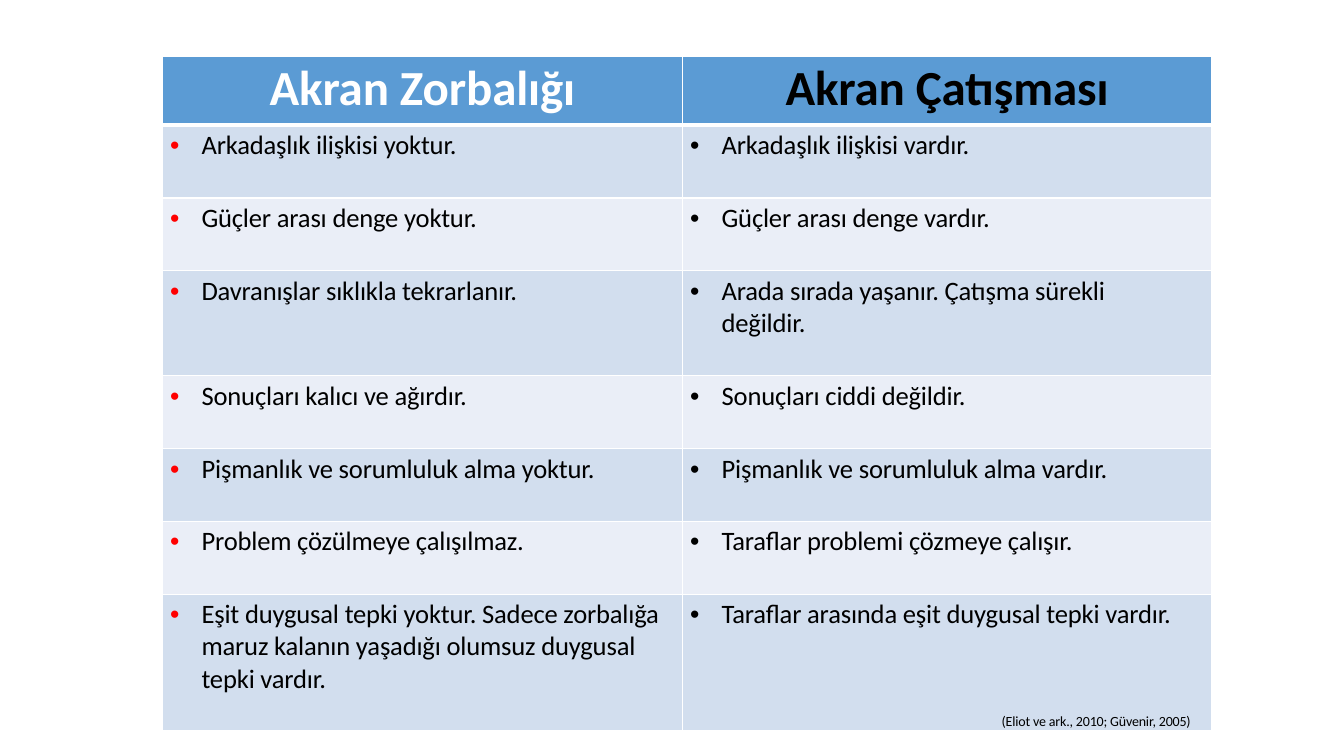
from dataclasses import dataclass

from lxml.etree import SubElement
from pptx import Presentation
from pptx.dml.color import RGBColor as Rgb
from pptx.enum.text import PP_ALIGN as Align
from pptx.oxml.ns import qn
from pptx.util import Pt


@dataclass(frozen=True)
class Theme:
    font: str = "Calibri"
    heading_size: int = 35
    body_size: int = 19
    citation_size: int = 10
    white: str = "FFFFFF"
    black: str = "000000"
    red: str = "FF0000"
    heading_fill: str = "5B9BD4"
    band_fills: tuple = ("D2DEEE", "EAEEF7")


THEME = Theme()
HEADINGS = [("Akran Zorbalığı", THEME.white), ("Akran Çatışması", THEME.black)]
COMPARISONS = [
    ("Arkadaşlık ilişkisi yoktur.", "Arkadaşlık ilişkisi vardır."),
    ("Güçler arası denge yoktur.", "Güçler arası denge vardır."),
    ("Davranışlar sıklıkla tekrarlanır.",
     "Arada sırada yaşanır. Çatışma sürekli\vdeğildir."),
    ("Sonuçları kalıcı ve ağırdır.", "Sonuçları ciddi değildir."),
    ("Pişmanlık ve sorumluluk alma yoktur.",
     "Pişmanlık ve sorumluluk alma vardır."),
    ("Problem çözülmeye çalışılmaz.", "Taraflar problemi çözmeye çalışır."),
    ("Eşit duygusal tepki yoktur. Sadece zorbalığa maruz kalanın "
     "yaşadığı olumsuz duygusal tepki vardır.",
     "Taraflar arasında eşit duygusal tepki vardır."),
]
CITATION = "(Eliot ve ark., 2010; Güvenir, 2005)"
BULLET_COLORS = (THEME.red, THEME.black)
COLUMN_WIDTHS = (371.5, 378)
ROW_HEIGHTS = (49, 52, 52, 75, 52, 52, 52, 97.5)


def write(paragraph, text, size, color=THEME.black, bold=False):
    paragraph.text = text
    paragraph.font.name = THEME.font
    paragraph.font.size = Pt(size)
    paragraph.font.bold = bold
    paragraph.font.color.rgb = Rgb.from_string(color)
    for run in paragraph.runs:
        run.font._element.set("spc", "-10")


def indent(paragraph, left, hanging=0):
    properties = paragraph._p.get_or_add_pPr()
    properties.set("marL", str(Pt(left)))
    properties.set("indent", str(Pt(-hanging)))
    return properties


def add_bullet(paragraph, color):
    properties = indent(paragraph, 28, 22.5)
    bullet_color = SubElement(properties, qn("a:buClr"))
    SubElement(bullet_color, qn("a:srgbClr"), val=color)
    SubElement(properties, qn("a:buFont"), typeface="Arial")
    SubElement(properties, qn("a:buChar"), char="•")


def draw_borders(cell, top, bottom):
    properties = cell._tc.get_or_add_tcPr()
    for side, width in (("L", 1), ("R", 1), ("T", top), ("B", bottom)):
        border = SubElement(properties, qn(f"a:ln{side}"), w=str(Pt(width)))
        fill = SubElement(border, qn("a:solidFill"))
        SubElement(fill, qn("a:srgbClr"), val=THEME.white)


def style_cell(cell, fill, margin_top, border_top=1, border_bottom=1):
    cell.margin_left = cell.margin_right = cell.margin_bottom = 0
    cell.margin_top = Pt(margin_top)
    draw_borders(cell, border_top, border_bottom)
    cell.fill.solid()
    cell.fill.fore_color.rgb = Rgb.from_string(fill)
    return cell.text_frame.paragraphs[0]


def fill_headings(table):
    for column, (text, color) in enumerate(HEADINGS):
        heading = style_cell(table.cell(0, column), THEME.heading_fill, 1.4,
                             border_bottom=3)
        heading.alignment = Align.CENTER
        write(heading, text, THEME.heading_size, color, bold=True)


def fill_comparisons(table):
    for row, statements in enumerate(COMPARISONS, start=1):
        fill = THEME.band_fills[(row - 1) % 2]
        for column, text in enumerate(statements):
            statement = style_cell(table.cell(row, column), fill, 3.1,
                                   border_top=3 if row == 1 else 1)
            add_bullet(statement, BULLET_COLORS[column])
            write(statement, text, THEME.body_size)


def add_citation(cell):
    citation = cell.text_frame.add_paragraph()
    indent(citation, 228)
    citation.space_before = Pt(59)
    write(citation, CITATION, THEME.citation_size)


def add_comparison_table(slide):
    table = slide.shapes.add_table(
        len(ROW_HEIGHTS), len(COLUMN_WIDTHS), Pt(116), Pt(40.5),
        Pt(sum(COLUMN_WIDTHS)), Pt(sum(ROW_HEIGHTS))).table
    table.first_row = table.horz_banding = False
    for column, width in zip(table.columns, COLUMN_WIDTHS):
        column.width = Pt(width)
    for row, height in zip(table.rows, ROW_HEIGHTS):
        row.height = Pt(height)
    return table


def main():
    presentation = Presentation()
    presentation.slide_width = Pt(960)
    presentation.slide_height = Pt(540)
    slide = presentation.slides.add_slide(presentation.slide_layouts[6])
    table = add_comparison_table(slide)
    fill_headings(table)
    fill_comparisons(table)
    add_citation(table.cell(len(COMPARISONS), 1))
    presentation.save("out.pptx")


if __name__ == "__main__":
    main()
